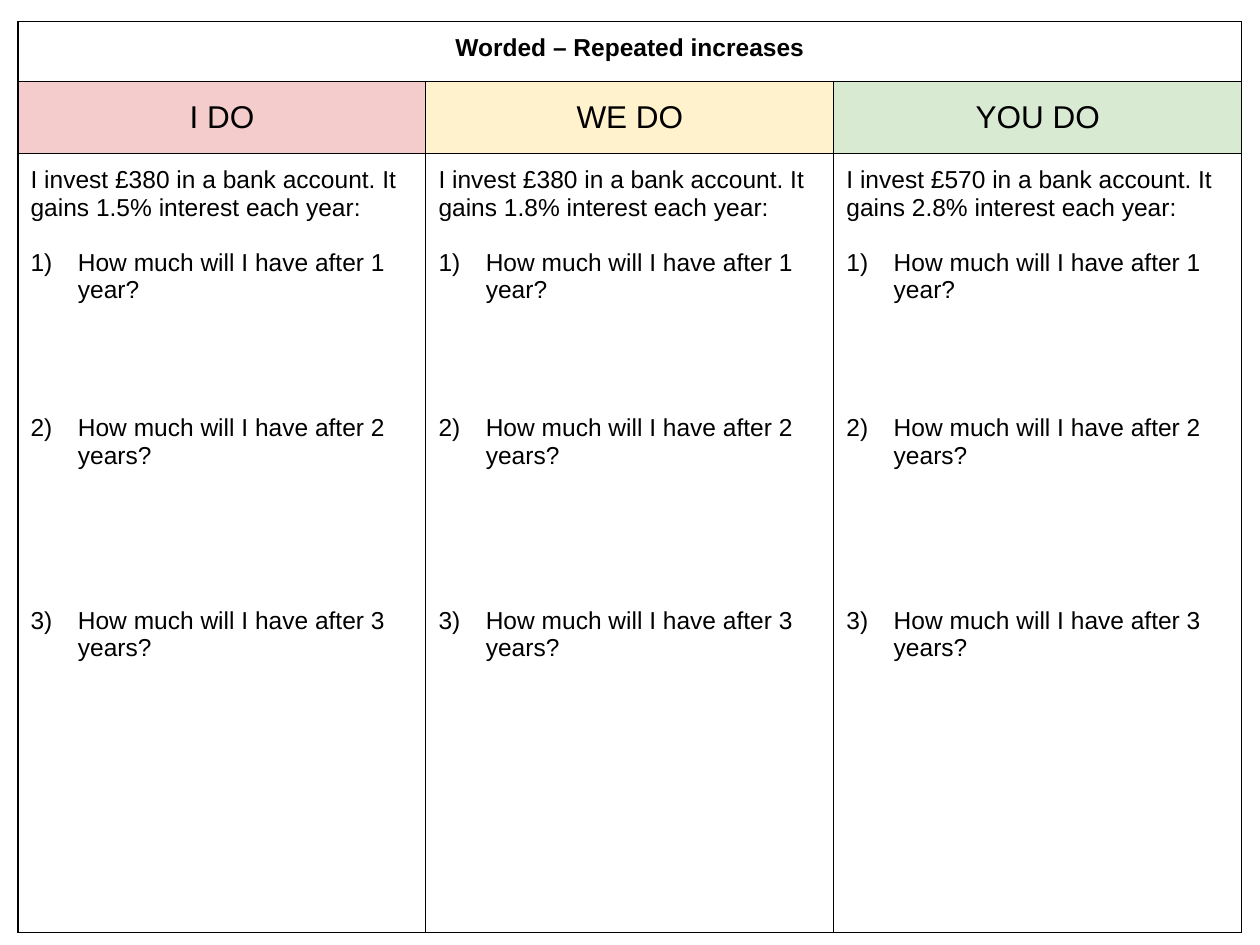
from lxml.etree import SubElement
from pptx import Presentation
from pptx.dml.color import RGBColor
from pptx.enum.text import MSO_ANCHOR, PP_ALIGN
from pptx.oxml.ns import qn
from pptx.util import Pt

COLORS = {"text": "000000", "border": "000000",
          "i": "F4CCCC", "we": "FFF2CC", "you": "D9EAD3"}
COLUMNS = [("I DO", "i", "£380", "1.5%"),
           ("WE DO", "we", "£380", "1.8%"),
           ("YOU DO", "you", "£570", "2.8%")]
# Question ending and the answer space above it
QUESTIONS = [("1 year?", 15.7), ("2 years?", 62.9), ("3 years?", 78.6)]


def add_text(p, text, size=14, bold=False):
    r = p.add_run()
    r.text = text
    r.font.name = "Arial"
    r.font.size = Pt(size)
    r.font.bold = bold
    r.font.color.rgb = RGBColor.from_string(COLORS["text"])


def format_cell(cell, fill=None):
    cell.margin_left = cell.margin_right = Pt(7.2)
    cell.margin_top = cell.margin_bottom = Pt(7.2)
    tcPr = cell._tc.get_or_add_tcPr()
    for side in ("lnL", "lnR", "lnT", "lnB"):
        ln = SubElement(tcPr, qn(f"a:{side}"), w=str(Pt(0.75)))
        solid = SubElement(ln, qn("a:solidFill"))
        SubElement(solid, qn("a:srgbClr"), val=COLORS["border"])
    if fill:
        cell.fill.solid()
        cell.fill.fore_color.rgb = RGBColor.from_string(COLORS[fill])
    else:
        cell.fill.background()


prs = Presentation()
prs.slide_width, prs.slide_height = Pt(720), Pt(540)
s = prs.slides.add_slide(prs.slide_layouts[6])

# Table grid
table = s.shapes.add_table(3, 3, Pt(10.3), Pt(12.4), Pt(699.3), Pt(520.6)).table
table.first_row = table.horz_banding = False
for column in table.columns:
    column.width = Pt(233.1)
for row, height in zip(table.rows, (34, 41.6, 445)):
    row.height = Pt(height)

# Title row
for c in range(3):
    format_cell(table.cell(0, c))
title = table.cell(0, 0)
title.merge(table.cell(0, 2))
p = title.text_frame.paragraphs[0]
p.alignment = PP_ALIGN.CENTER
add_text(p, "Worded – Repeated increases", bold=True)

for c, (heading, fill, amount, rate) in enumerate(COLUMNS):
    # Column heading
    cell = table.cell(1, c)
    format_cell(cell, fill)
    cell.vertical_anchor = MSO_ANCHOR.MIDDLE
    p = cell.text_frame.paragraphs[0]
    p.alignment = PP_ALIGN.CENTER
    add_text(p, heading, size=18)

    # Problem and numbered questions
    cell = table.cell(2, c)
    format_cell(cell)
    tf = cell.text_frame
    add_text(tf.paragraphs[0], f"I invest {amount} in a bank account. "
                               f"It gains {rate} interest each year:")
    for ending, gap in QUESTIONS:
        p = tf.add_paragraph()
        p.space_before = Pt(gap)
        pPr = p._p.get_or_add_pPr()
        pPr.set("marL", str(Pt(27)))
        pPr.set("indent", str(-Pt(27)))
        color = SubElement(pPr, qn("a:buClr"))
        SubElement(color, qn("a:srgbClr"), val=COLORS["text"])
        SubElement(pPr, qn("a:buFont"), typeface="Arial")
        SubElement(pPr, qn("a:buAutoNum"), type="arabicParenR")
        add_text(p, f"How much will I have after {ending}")

prs.save("out.pptx")
